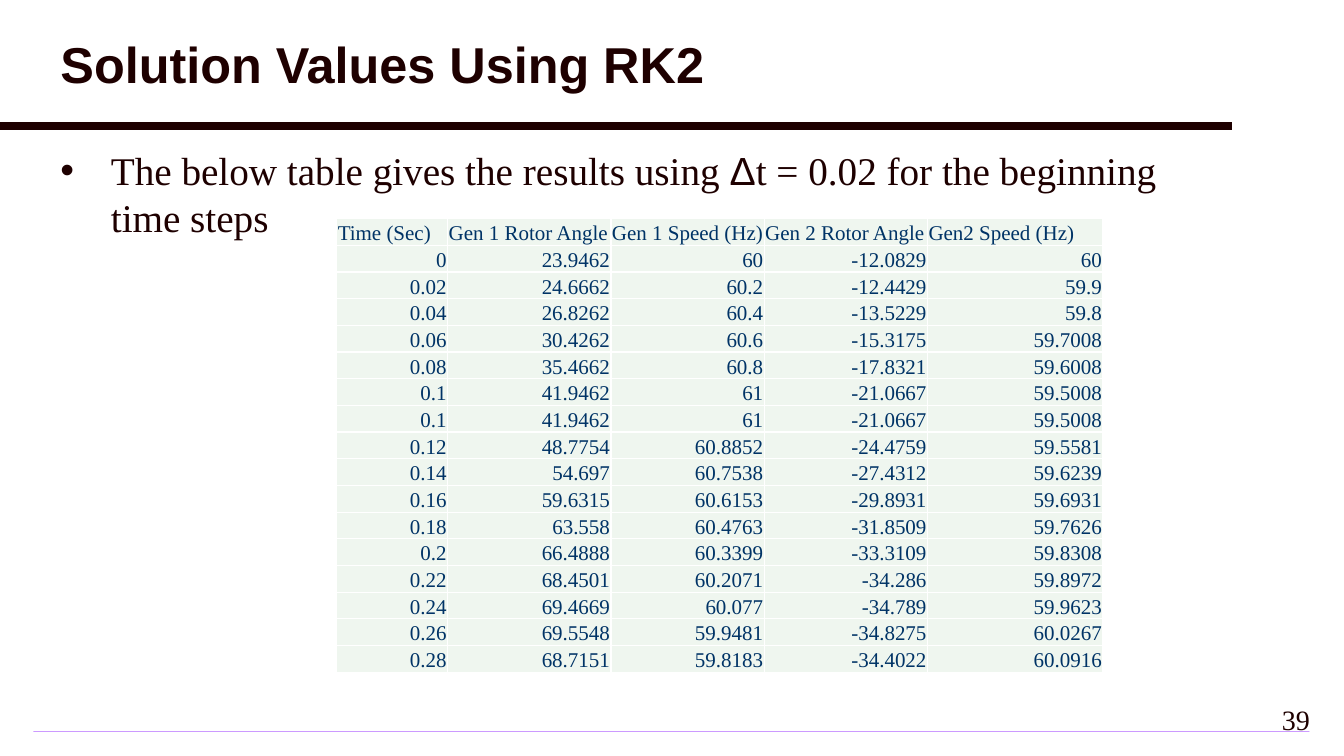
import pptx
import pptx.dml.color
import pptx.enum.shapes
import pptx.enum.text
import pptx.oxml
import pptx.oxml.ns
import pptx.util
from lxml import etree

Inches, Pt = pptx.util.Inches, pptx.util.Pt
ALIGN, ANCHOR = pptx.enum.text.PP_ALIGN, pptx.enum.text.MSO_ANCHOR
qn = pptx.oxml.ns.qn
DARK, NAVY, MINT, WHITE = "1E0000", "003366", "EFF6EF", "FFFFFF"
SERIF = "Times New Roman"


def rgb(value):
    return pptx.dml.color.RGBColor.from_string(value)


def add_run(p, text, color, **formats):
    r = p.add_run()
    r.text = text
    r.font.color.rgb = rgb(color)
    for name, value in formats.items():
        setattr(r.font, name, value)


prs = pptx.Presentation()
prs.slide_width, prs.slide_height = Inches(13.33), Inches(7.5)
s = prs.slides.add_slide(prs.slide_layouts[1])
s.background.fill.solid()
s.background.fill.fore_color.rgb = rgb(WHITE)

# Footer rule with a gradient running out from its centre
sp = s.shapes.add_shape(pptx.enum.shapes.MSO_SHAPE.RECTANGLE,
                        Inches(0.33), Inches(7.25), Inches(12.66), Inches(0.01))
sp.shadow.inherit = False
sp.line.fill.background()
sp.fill.gradient()
for stop, color in zip(sp.fill.gradient_stops, ("CC99FF", "F3EBFF")):
    stop.color.rgb = rgb(color)
grad = sp._element.spPr.find(qn("a:gradFill"))
grad.remove(grad.find(qn("a:lin")))
shade = etree.SubElement(grad, qn("a:path"), {"path": "shape"})
etree.SubElement(shade, qn("a:fillToRect"), dict.fromkeys("ltrb", "50000"))

# Heavy rule under the title
rule = s.shapes.add_connector(pptx.enum.shapes.MSO_CONNECTOR.STRAIGHT,
                              0, Inches(1.25), Inches(12.22), Inches(1.25))
rule.line.color.rgb = rgb(DARK)
rule.line.width = Pt(6)
etree.SubElement(rule._element.spPr, qn("a:effectLst"))

# Title and body placeholders
title, body = s.shapes.title, s.placeholders[1]
for ph, box, anchor in ((title, (0.5, 0.08, 12.67, 1.17), ANCHOR.MIDDLE),
                        (body, (0.5, 1.4, 11.67, 1.1), ANCHOR.TOP)):
    ph.left, ph.top, ph.width, ph.height = map(Inches, box)
    tf = ph.text_frame
    for name, value in {"word_wrap": True, "vertical_anchor": anchor,
                        "auto_size": pptx.enum.text.MSO_AUTO_SIZE.NONE}.items():
        setattr(tf, name, value)
    tf.paragraphs[0].alignment = ALIGN.LEFT

p = title.text_frame.paragraphs[0]
p.line_spacing = 0.9
add_run(p, "Solution Values Using RK2", DARK, size=Pt(36), name="Arial", bold=True)

p = body.text_frame.paragraphs[0]
pPr = p._p.get_or_add_pPr()
pPr.set("marL", str(Inches(0.5)))
pPr.set("indent", str(Inches(-0.5)))
etree.SubElement(etree.SubElement(pPr, qn("a:buClr")), qn("a:srgbClr"), val=DARK)
etree.SubElement(pPr, qn("a:buFont"), typeface="Arial")
etree.SubElement(pPr, qn("a:buChar"), char="•")
p.space_before = Pt(0)
for text, font in (("The below table gives the results using ", SERIF),
                   ("Δ", "Arial"),
                   ("t = 0.02 for the beginning time steps", SERIF)):
    add_run(p, text, DARK, size=Pt(28), name=font)

# Results table
headers = ["Time (Sec)", "Gen 1 Rotor Angle", "Gen 1 Speed (Hz)",
           "Gen 2 Rotor Angle", "Gen2 Speed (Hz)"]
results = """0 23.9462 60 -12.0829 60
0.02 24.6662 60.2 -12.4429 59.9
0.04 26.8262 60.4 -13.5229 59.8
0.06 30.4262 60.6 -15.3175 59.7008
0.08 35.4662 60.8 -17.8321 59.6008
0.1 41.9462 61 -21.0667 59.5008
0.1 41.9462 61 -21.0667 59.5008
0.12 48.7754 60.8852 -24.4759 59.5581
0.14 54.697 60.7538 -27.4312 59.6239
0.16 59.6315 60.6153 -29.8931 59.6931
0.18 63.558 60.4763 -31.8509 59.7626
0.2 66.4888 60.3399 -33.3109 59.8308
0.22 68.4501 60.2071 -34.286 59.8972
0.24 69.4669 60.077 -34.789 59.9623
0.26 69.5548 59.9481 -34.8275 60.0267
0.28 68.7151 59.8183 -34.4022 60.0916"""
rows = [headers] + [line.split() for line in results.splitlines()]
table = s.shapes.add_table(len(rows), len(headers), Inches(3.34), Inches(2.17),
                           Inches(7.6), Inches(4.5)).table
table.first_row = table.horz_banding = False
for column, width in zip(table.columns, (1.1, 1.62, 1.52, 1.62, 1.74)):
    column.width = Inches(width)

cell_format = {"margin_left": Inches(0.01), "margin_top": Inches(0.01),
               "margin_bottom": 0, "vertical_anchor": ANCHOR.BOTTOM}
for i, row in enumerate(rows):
    table.rows[i].height = Inches(4.5 / len(rows))
    for j, text in enumerate(row):
        cell = table.cell(i, j)
        for name, value in cell_format.items():
            setattr(cell, name, value)
        # Headers use the full column width to stay on one line
        cell.margin_right = Inches(0.01) if i else 0
        tcPr = cell._tc.get_or_add_tcPr()
        for edge in "LRTB":
            ln = etree.SubElement(tcPr, qn("a:ln" + edge), w=str(Pt(1)))
            fill = etree.SubElement(ln, qn("a:solidFill"))
            etree.SubElement(fill, qn("a:srgbClr"), val=WHITE)
        cell.fill.solid()
        cell.fill.fore_color.rgb = rgb(MINT)
        p = cell.text_frame.paragraphs[0]
        p.alignment = ALIGN.RIGHT if i else ALIGN.LEFT
        add_run(p, text, NAVY, size=Pt(15), name=SERIF)

# Page number
tf = s.shapes.add_textbox(Inches(12.42), Inches(6.92), Inches(0.67), Inches(0.5)).text_frame
tf.word_wrap = True
p = tf.paragraphs[0]
p.alignment = ALIGN.RIGHT
add_run(p, "39", DARK, size=Pt(20), name=SERIF)

prs.save("out.pptx")
